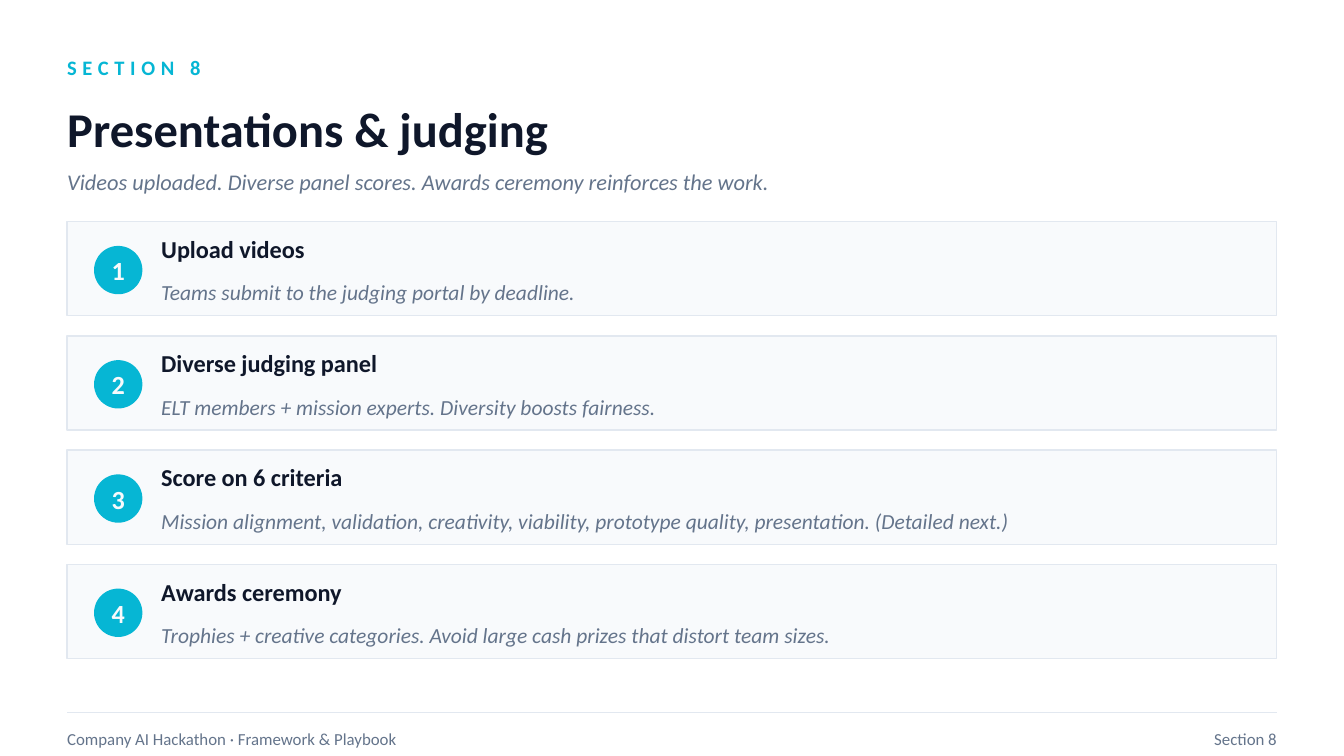
"""Build the "Presentations & judging" slide: four numbered steps under a title."""
from dataclasses import dataclass

from lxml import etree
from pptx import Presentation
from pptx.dml.color import RGBColor
from pptx.enum.shapes import MSO_CONNECTOR, MSO_SHAPE
from pptx.enum.text import MSO_ANCHOR, MSO_AUTO_SIZE, PP_ALIGN
from pptx.util import Inches, Pt


@dataclass(frozen=True)
class Theme:
    font: str = "Calibri"
    accent: RGBColor = RGBColor.from_string("06B6D4")
    ink: RGBColor = RGBColor.from_string("0F172A")
    muted: RGBColor = RGBColor.from_string("64748B")
    panel: RGBColor = RGBColor.from_string("F8FAFC")
    rule: RGBColor = RGBColor.from_string("E2E8F0")
    rule_width: float = 0.75
    eyebrow_size: float = 11
    title_size: float = 26
    subtitle_size: float = 12
    number_size: float = 14
    heading_size: float = 13
    detail_size: float = 11.5
    footer_size: float = 9


def write(shape, text, size, color, bold=False, italic=False, align=PP_ALIGN.LEFT):
    frame = shape.text_frame
    frame.text = text
    frame.word_wrap = True
    frame.auto_size = MSO_AUTO_SIZE.NONE
    frame.vertical_anchor = MSO_ANCHOR.MIDDLE
    frame.margin_left = frame.margin_right = frame.margin_top = frame.margin_bottom = 0
    paragraph = frame.paragraphs[0]
    paragraph.alignment = align
    font = paragraph.runs[0].font
    font.name, font.size, font.color.rgb = theme.font, Pt(size), color
    font.bold, font.italic = bold, italic
    return paragraph.runs[0]


def place(left, top, width, height):
    return [Inches(length) for length in (left, top, width, height)]


theme = Theme()
slide_width = 10
prs = Presentation()
prs.slide_width, prs.slide_height = Inches(slide_width), Inches(slide_width * 9 / 16)
slide = prs.slides.add_slide(prs.slide_layouts[5])
shapes = slide.shapes

margin = 0.5
content_width = slide_width - 2 * margin
right_edge = margin + content_width

eyebrow = shapes.add_textbox(*place(margin, 0.35, 4, 0.3))
eyebrow_run = write(eyebrow, "SECTION 8", theme.eyebrow_size, theme.accent, bold=True)
eyebrow_run.font._element.set("spc", "300")

title = shapes.title
title.left, title.top, title.width, title.height = place(margin, 0.65, content_width, 0.6)
write(title, "Presentations & judging", theme.title_size, theme.ink, bold=True)

subtitle = shapes.add_textbox(*place(margin, 1.2, content_width, 0.3))
write(subtitle, "Videos uploaded. Diverse panel scores. Awards ceremony reinforces the work.",
      theme.subtitle_size, theme.muted, italic=True)

steps = [
    ("Upload videos", "Teams submit to the judging portal by deadline."),
    ("Diverse judging panel", "ELT members + mission experts. Diversity boosts fairness."),
    ("Score on 6 criteria",
     "Mission alignment, validation, creativity, viability, prototype quality, "
     "presentation. (Detailed next.)"),
    ("Awards ceremony",
     "Trophies + creative categories. Avoid large cash prizes that distort team sizes."),
]
first_row, row_height, row_gap = 1.65, 0.7, 0.15
number_column, text_column, badge_size = margin + 0.2, margin + 0.7, 0.36

for index, (heading_text, detail_text) in enumerate(steps):
    top = first_row + index * (row_height + row_gap)

    panel = shapes.add_shape(MSO_SHAPE.RECTANGLE, *place(margin, top, content_width, row_height))
    panel.shadow.inherit = False
    panel.fill.solid()
    panel.fill.fore_color.rgb = theme.panel
    panel.line.color.rgb = theme.rule
    panel.line.width = Pt(theme.rule_width)

    badge = shapes.add_shape(MSO_SHAPE.OVAL,
                             *place(number_column, top + 0.18, badge_size, badge_size))
    badge.shadow.inherit = False
    badge.fill.solid()
    badge.fill.fore_color.rgb = theme.accent
    badge.line.fill.background()

    number = shapes.add_textbox(*place(number_column, top + 0.18, badge_size, badge_size))
    write(number, str(index + 1), theme.number_size, theme.panel, bold=True,
          align=PP_ALIGN.CENTER)

    heading = shapes.add_textbox(*place(text_column, top + 0.05, 2.7, 0.3))
    write(heading, heading_text, theme.heading_size, theme.ink, bold=True)

    detail = shapes.add_textbox(*place(text_column, top + 0.35, 8.1, 0.35))
    write(detail, detail_text, theme.detail_size, theme.muted, italic=True)

footer_rule = shapes.add_connector(MSO_CONNECTOR.STRAIGHT, Inches(margin), Inches(5.3),
                                   Inches(right_edge), Inches(5.3))
footer_rule.line.color.rgb = theme.rule
footer_rule.line.width = Pt(theme.rule_width)
etree.SubElement(footer_rule._element.spPr,
                 "{http://schemas.openxmlformats.org/drawingml/2006/main}effectLst")

deck_name = shapes.add_textbox(*place(margin, 5.35, 5.5, 0.3))
write(deck_name, "Company AI Hackathon · Framework & Playbook", theme.footer_size, theme.muted)

section_label = shapes.add_textbox(*place(right_edge - 3.5, 5.35, 3.5, 0.3))
write(section_label, "Section 8", theme.footer_size, theme.muted, align=PP_ALIGN.RIGHT)

prs.save("out.pptx")
